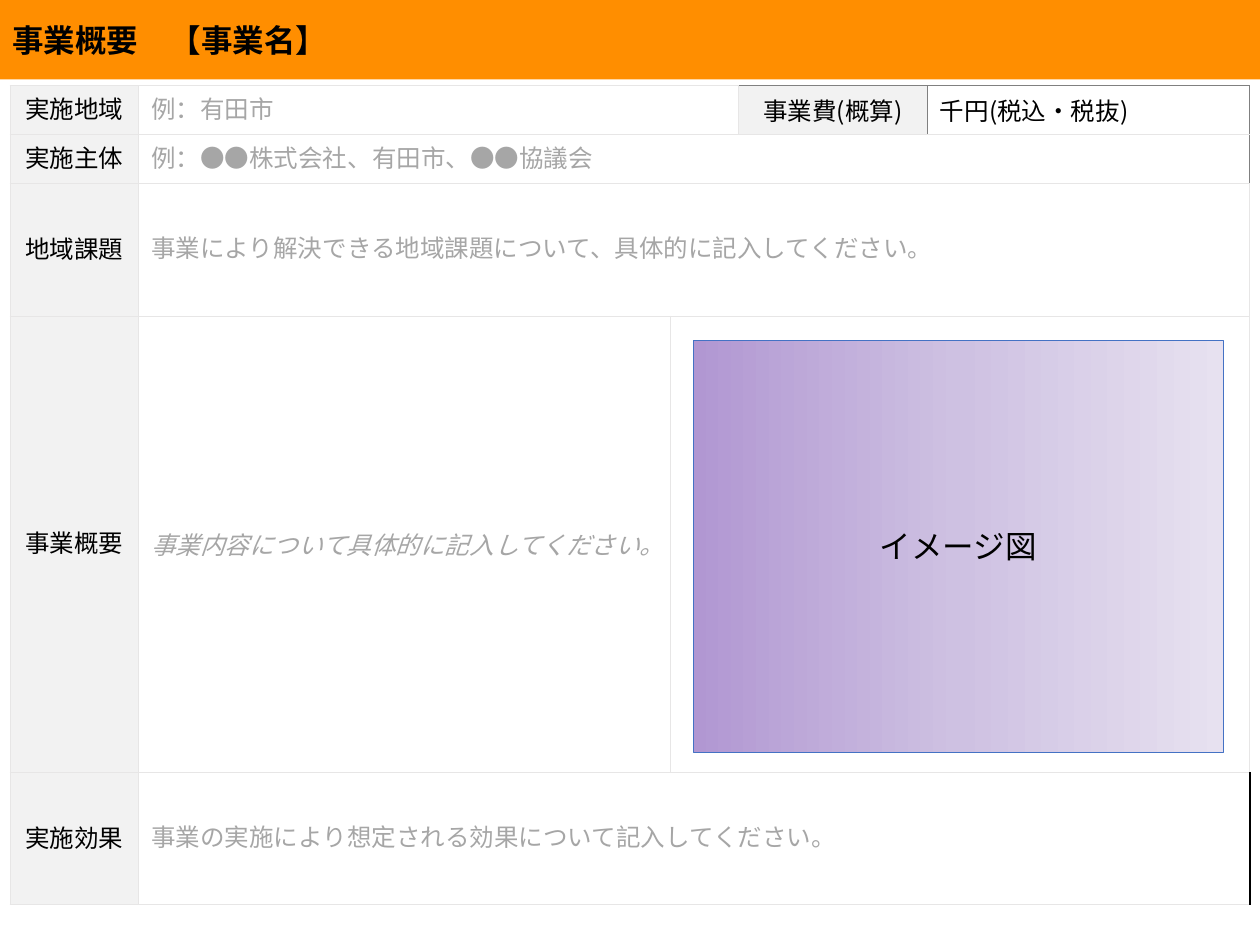
from copy import deepcopy
from lxml.etree import SubElement as Sub
from pptx import Presentation
from pptx.dml.color import RGBColor
from pptx.enum.shapes import MSO_SHAPE as Shape
from pptx.enum.text import MSO_ANCHOR as Anchor, PP_ALIGN as Align
from pptx.oxml.ns import qn
from pptx.util import Inches, Pt

SANS = "Noto Sans CJK JP"
BLACK, HINT, LABEL = "000000", "A6A6A6", "F2F2F2"
PALE, GREY, DARK = ("E7E6E6", 0.5), ("808080", 0.5), (BLACK, 1)


def color(code):
    return RGBColor.from_string(code)


class Page:
    """Holds the text style and the current slide."""

    def __init__(self, deck, font, size):
        self.font, self.size = font, size
        self.slide = deck.slides.add_slide(deck.slide_layouts[6])

    def text(self, frame, words, ink=BLACK, size=None, font=None,
             center=False, bold=False, italic=False, lead=None):
        para = frame.paragraphs[0]
        para.alignment = Align.CENTER if center else Align.LEFT
        if lead:
            para.line_spacing = Pt(lead)
        run = para.add_run()
        run.text = words
        face = run.font
        face.size, face.bold, face.italic = Pt(size or self.size), bold, italic
        face.color.rgb = color(ink)
        face.name = font or self.font
        Sub(run._r.get_or_add_rPr(), qn("a:ea"), typeface=face.name)

    def box(self, left, top, width, height, words, fills, line=None, **style):
        box = self.slide.shapes.add_shape(
            Shape.RECTANGLE, *map(Inches, (left, top, width, height)))
        box.shadow.inherit = False
        if len(fills) == 1:
            box.fill.solid()
            box.fill.fore_color.rgb = color(fills[0])
        else:
            box.fill.gradient()
            box.fill.gradient_angle = 0
            stops = box._element.spPr.find(".//" + qn("a:gsLst"))
            while len(stops) < len(fills):
                stops.insert(1, deepcopy(stops[0]))
            for i, stop in enumerate(box.fill.gradient_stops):
                stop.position = i / (len(fills) - 1)
                stop.color.rgb = color(fills[i])
        if line:
            box.line.color.rgb = color(line)
            box.line.width = Pt(0.5)
        else:
            box.line.fill.background()
        box.text_frame.word_wrap = True
        box.text_frame.vertical_anchor = Anchor.MIDDLE
        self.text(box.text_frame, words, **style)

    def table(self, left, top, cols, rows):
        table = self.slide.shapes.add_table(
            len(rows), len(cols), Inches(left), Inches(top),
            Inches(sum(cols)), Inches(sum(rows))).table
        table.first_row = table.horz_banding = False
        for col, width in zip(table.columns, cols):
            col.width = Inches(width)
        for row, height in zip(table.rows, rows):
            row.height = Inches(height)
        return table

    def edge(self, cell, sides):
        props = cell._tc.get_or_add_tcPr()
        for side in "LRTB":
            tint, width = sides.get(side, PALE)
            line = Sub(props, qn("a:ln" + side), w=str(Pt(width)))
            Sub(Sub(line, qn("a:solidFill")), qn("a:srgbClr"), val=tint)

    def cell(self, table, row, col, words="", span=1, fill=None, sides=None, **style):
        cell = table.cell(row, col)
        if span > 1:
            cell.merge(table.cell(row, col + span - 1))
        for i in range(col, col + span):
            part = table.cell(row, i)
            self.edge(part, sides or {})
            if fill:
                part.fill.solid()
                part.fill.fore_color.rgb = color(fill)
            else:
                part.fill.background()
        cell.vertical_anchor = Anchor.MIDDLE
        if words:
            self.text(cell.text_frame, words, **style)


def main():
    deck = Presentation()
    deck.slide_width, deck.slide_height = Inches(10), Inches(7.5)
    page = Page(deck, SANS, 14)

    form = page.table(0.08, 0.68, [1.02, 4.22, 0.54, 1.5, 2.56],
                      [0.39, 0.39, 1.05, 3.62, 1.05])
    heads = ["実施地域", "実施主体", "地域課題", "事業概要", "実施効果"]
    for row, head in enumerate(heads):
        page.cell(form, row, 0, head, fill=LABEL, center=True, lead=18)

    hints = [
        (0, "例：有田市", 2, 18, {}),
        (1, "例：●●株式会社、有田市、●●協議会", 4, 18, {"R": GREY}),
        (2, "事業により解決できる地域課題について、具体的に記入してください。", 4, 17, {}),
        (4, "事業の実施により想定される効果について記入してください。", 4, 17, {"R": DARK}),
    ]
    for row, words, span, lead, sides in hints:
        page.cell(form, row, 1, words, span, sides=sides, ink=HINT, lead=lead)

    page.cell(form, 0, 3, "事業費(概算)", fill=LABEL, center=True,
              sides=dict.fromkeys("TRB", GREY))
    page.cell(form, 0, 4, "千円(税込・税抜)", sides=dict.fromkeys("LTRB", GREY))
    page.cell(form, 3, 1, "事業内容について具体的に記入してください。",
              ink=HINT, italic=True)
    page.cell(form, 3, 2, span=3)

    page.box(0, 0, 10, 0.63, "事業概要　【事業名】", ["FF8E00"], size=18, bold=True)
    page.box(5.5, 2.7, 4.21, 3.27, "イメージ図", ["B197D2", "CEC1E2", "E7E1F0"],
             line="4472C4", size=18, font="Calibri", center=True)
    deck.save("out.pptx")


if __name__ == "__main__":
    main()
